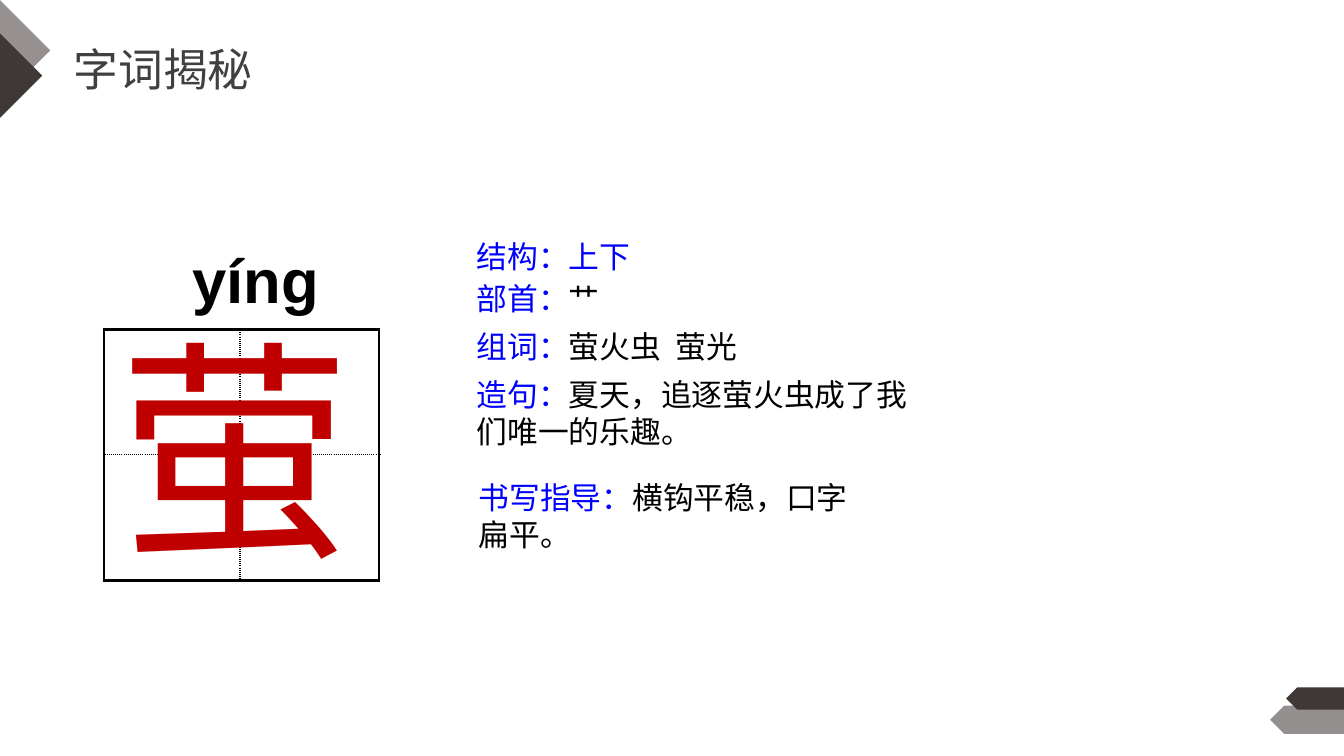
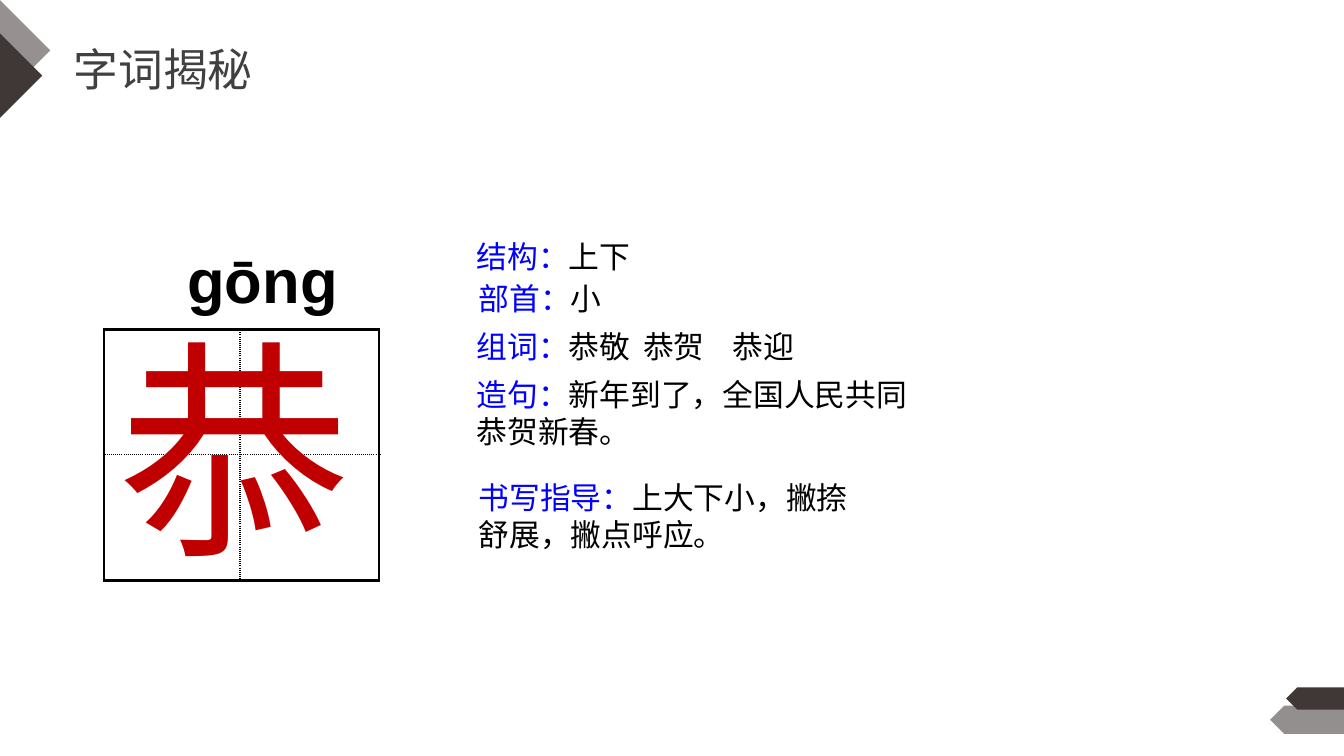
from dataclasses import dataclass

from lxml import etree
from pptx import Presentation
from pptx.dml.color import RGBColor
from pptx.enum.lang import MSO_LANGUAGE_ID
from pptx.enum.shapes import MSO_SHAPE
from pptx.enum.text import MSO_AUTO_SIZE
from pptx.oxml.ns import qn
from pptx.util import Pt

PENTAGON = MSO_SHAPE.PENTAGON
FIT_SHAPE = MSO_AUTO_SIZE.SHAPE_TO_FIT_TEXT
CHINESE = MSO_LANGUAGE_ID.SIMPLIFIED_CHINESE

COLORS = {
    "brown": "403836",
    "title": "404040",
    "label": "0000FF",
    "text": "000000",
    "character": "C00000",
    "paper": "FFFFFF",
}
FONT = "Arial"
TITLE = "字词揭秘"
NOTE_SIZE = 22
NOTE_LEFT = 333.4
GUIDE_LEFT = 334.8
ONE_LINE, TWO_LINES = 33.8, 60.5

GRID_LEFT, GRID_TOP = 74.2, 235.4
GRID_COLUMNS = (97.2, 99.4)
GRID_ROWS = (89.3, 90)
OUTER_WIDTH, INNER_WIDTH = 2.25, 1.5


@dataclass
class Entry:
    character: str
    pinyin: str
    pinyin_left: float
    pinyin_width: float
    structure: str
    radical: str
    words: str
    word_stops: tuple
    sentence: str
    guide: str
    structure_color: str = "text"
    radical_left: float = NOTE_LEFT


ENTRIES = [
    Entry("萤", "yíng", 130.3, 107.3, "上下", "艹", "萤火虫\t萤光", (142,),
          "夏天，追逐萤火虫成了我们唯一的乐趣。", "横钩平稳，口字扁平。",
          structure_color="label"),
    Entry("恭", "gōng", 126.7, 123.8, "上下", "小", "恭敬\t恭贺\t恭迎", (119, 183),
          "新年到了，全国人民共同恭贺新春。", "上大下小，撇捺舒展，撇点呼应。",
          radical_left=GUIDE_LEFT),
]


def rgb(color):
    return RGBColor.from_string(COLORS[color])


def paint(shape, color, alpha=100):
    shape.shadow.inherit = False
    shape.line.fill.background()
    shape.fill.solid()
    shape.fill.fore_color.rgb = rgb(color)
    if alpha < 100:
        tint = shape.fill._xPr.find(".//" + qn("a:srgbClr"))
        etree.SubElement(tint, qn("a:alpha"), val=str(alpha * 1000))


def add_triangle(slide, top, height, alpha=100):
    outline = slide.shapes.build_freeform(Pt(0), Pt(top))
    outline.add_line_segments(
        [(Pt(height / 2), Pt(top + height / 2)), (Pt(0), Pt(top + height))])
    paint(outline.convert_to_shape(), "brown", alpha)


def add_tag(slide, left, top, width, height, alpha=100):
    tag = slide.shapes.add_shape(PENTAGON, Pt(left), Pt(top), Pt(width), Pt(height))
    tag.rotation = 180
    paint(tag, "brown", alpha)


def add_text(slide, box, runs, size, bold=False, wrap=True):
    textbox = slide.shapes.add_textbox(*map(Pt, box))
    frame = textbox.text_frame
    frame.word_wrap = wrap
    frame.auto_size = FIT_SHAPE
    for text, color in runs:
        run = frame.paragraphs[0].add_run()
        run.text = text
        run.font.name = FONT
        run.font.size = Pt(size)
        run.font.bold = bold
        run.font.color.rgb = rgb(color)
        run.font.language_id = CHINESE
    return textbox


def add_note(slide, box, label, value, value_color="text"):
    runs = [(label + "：", "label"), (value, value_color)]
    return add_text(slide, box, runs, NOTE_SIZE)


def set_tab_stops(textbox, stops):
    properties = textbox.text_frame.paragraphs[0]._p.get_or_add_pPr()
    tabs = etree.SubElement(properties, qn("a:tabLst"))
    for stop in stops:
        etree.SubElement(tabs, qn("a:tab"), pos=str(Pt(stop)), algn="l")


def add_border(cell, side, outer):
    width = OUTER_WIDTH if outer else INNER_WIDTH
    line = etree.SubElement(cell._tc.get_or_add_tcPr(), qn("a:ln" + side), w=str(Pt(width)))
    fill = etree.SubElement(line, qn("a:solidFill"))
    etree.SubElement(fill, qn("a:srgbClr"), val=COLORS["text"])
    etree.SubElement(line, qn("a:prstDash"), val="solid" if outer else "sysDot")


def add_writing_grid(slide):
    grid = slide.shapes.add_table(
        len(GRID_ROWS), len(GRID_COLUMNS), Pt(GRID_LEFT), Pt(GRID_TOP),
        Pt(sum(GRID_COLUMNS)), Pt(sum(GRID_ROWS))).table
    grid.first_row = grid.horz_banding = False
    for column, width in zip(grid.columns, GRID_COLUMNS):
        column.width = Pt(width)
    for r, height in enumerate(GRID_ROWS):
        grid.rows[r].height = Pt(height)
        for c in range(len(GRID_COLUMNS)):
            cell = grid.cell(r, c)
            for side, outer in (("L", c == 0), ("R", c == 1), ("T", r == 0), ("B", r == 1)):
                add_border(cell, side, outer)
            cell.fill.background()


def add_frame(slide):
    add_tag(slide, 907.2, 504, 52.8, 20.2, alpha=56)
    add_tag(slide, 918.7, 491, 41.3, 15.8)
    add_triangle(slide, 0, 72, alpha=55)
    add_triangle(slide, 23.8, 60.4)
    add_text(slide, (45.4, 26.6, 324.7, 46.1), [(TITLE, "title")], 32)


def add_notes(slide, entry):
    add_note(slide, (GUIDE_LEFT, 338.4, 290.2, TWO_LINES), "书写指导", entry.guide)
    structure = add_note(slide, (NOTE_LEFT, 166.3, 184.3, ONE_LINE),
                         "结构", entry.structure, entry.structure_color)
    paint(structure, "paper")
    words = add_note(slide, (NOTE_LEFT, 230.4, 275, ONE_LINE), "组词", entry.words)
    set_tab_stops(words, entry.word_stops)
    add_note(slide, (NOTE_LEFT, 265, 328.3, TWO_LINES), "造句", entry.sentence)
    add_note(slide, (entry.radical_left, 196.6, 229, ONE_LINE), "部首", entry.radical)


def add_character(slide, entry):
    add_writing_grid(slide)
    add_text(slide, (77.8, 215.3, 182.2, 208.1),
             [(entry.character, "character")], 166, wrap=False)
    add_text(slide, (entry.pinyin_left, 169.2, entry.pinyin_width, TWO_LINES),
             [(entry.pinyin, "text")], 44, bold=True, wrap=False)


def main():
    deck = Presentation()
    deck.slide_width, deck.slide_height = Pt(960), Pt(540)
    blank = deck.slide_layouts[6]
    for entry in ENTRIES:
        slide = deck.slides.add_slide(blank)
        add_frame(slide)
        add_notes(slide, entry)
        add_character(slide, entry)
    deck.save("out.pptx")


if __name__ == "__main__":
    main()
